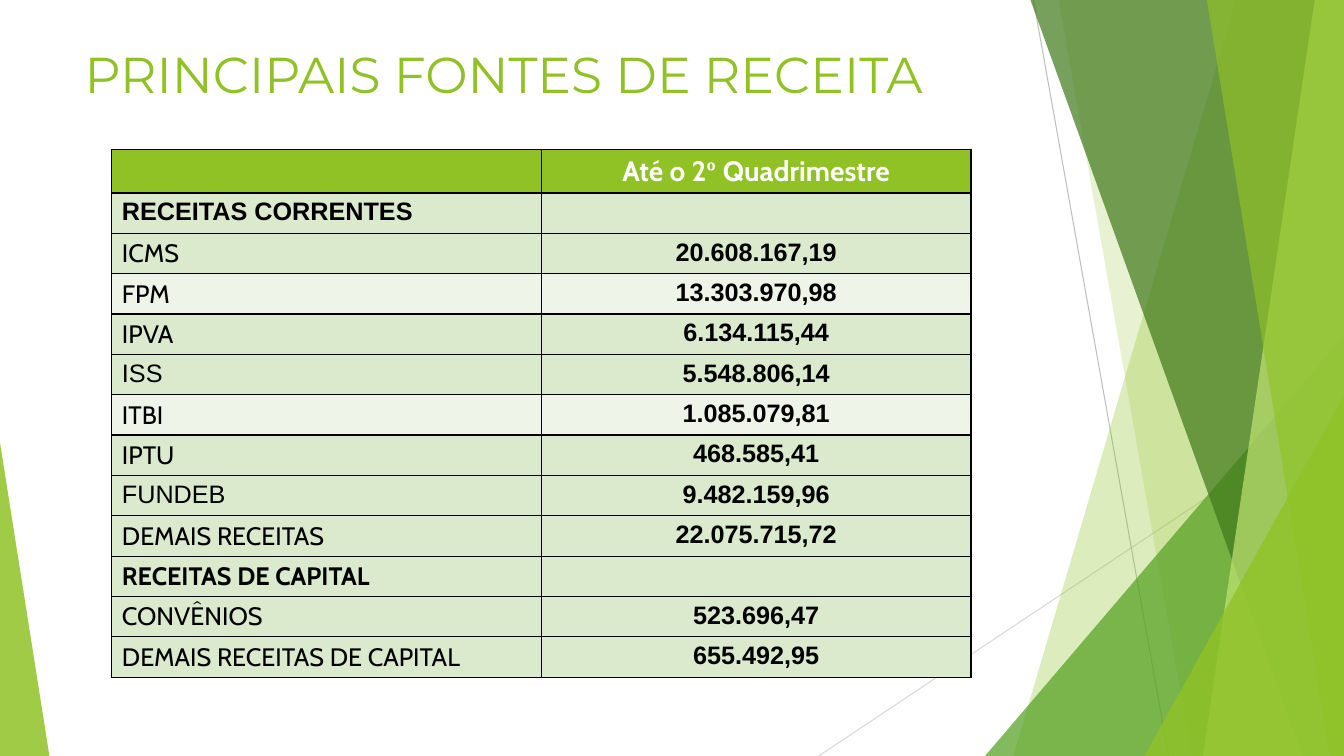
from dataclasses import dataclass

from pptx import Presentation
from pptx.dml.color import RGBColor
from pptx.enum.shapes import MSO_CONNECTOR
from pptx.enum.text import MSO_ANCHOR, PP_ALIGN
from pptx.oxml import parse_xml
from pptx.oxml.ns import nsdecls, qn
from pptx.util import Inches, Pt
from lxml.etree import SubElement


@dataclass(frozen=True)
class Theme:
    lime: str = "90C226"
    green: str = "54A021"
    dark: str = "3F7819"
    pale: str = "C0E474"
    band: str = "DBE9CD"
    light: str = "EEF4E8"
    black: str = "000000"
    white: str = "FFFFFF"
    title: int = 36
    head: int = 20
    body: int = 18
    sans: str = "Arial"
    cabin: str = "Cabin"
    serif: str = "Times New Roman"
    display: str = "Montserrat"


THEME = Theme()

LINES = [
    ((8.12, 7.5), (13.33, 4.03), "D9D9D9"),
    ((10.25, 0), (11.59, 7.5), "BFBFBF"),
]

SHARDS = [
    ([(12.26, 0), (10.05, 7.5), (13.33, 7.5), (13.33, 0)], THEME.lime, 30),
    ([(10.5, 0), (11.82, 7.5), (13.33, 7.5), (13.33, 0)], THEME.lime, 20),
    ([(9.77, 7.5), (13.33, 3.33), (13.33, 7.5)], THEME.green, 72),
    ([(10.22, 0), (12.92, 7.5), (13.33, 7.5), (13.33, 0)], THEME.dark, 70),
    ([(13.04, 0), (11.93, 7.5), (13.33, 7.5), (13.33, 0)], THEME.pale, 70),
    ([(11.97, 0), (13.19, 7.5), (13.33, 7.5), (13.33, 0)], THEME.lime, 65),
    ([(11.35, 7.5), (13.33, 3.93), (13.33, 7.5)], THEME.lime, 80),
    ([(0, 4.39), (0.49, 7.5), (0, 7.5)], THEME.lime, 85),
]

ROWS = [
    ("RECEITAS CORRENTES", ""),
    ("ICMS", "20.608.167,19"),
    ("FPM", "13.303.970,98"),
    ("IPVA", "6.134.115,44"),
    ("ISS", "5.548.806,14"),
    ("ITBI", "1.085.079,81"),
    ("IPTU", "468.585,41"),
    ("FUNDEB", "9.482.159,96"),
    ("DEMAIS RECEITAS", "22.075.715,72"),
    ("RECEITAS DE CAPITAL", ""),
    ("CONVÊNIOS", "523.696,47"),
    ("DEMAIS RECEITAS DE CAPITAL", "655.492,95"),
]
PLAIN = {"RECEITAS CORRENTES", "ISS", "FUNDEB"}
LIGHT = {"FPM", "ITBI"}


def style(font, name, size, color, bold=False):
    font.name = name
    font.size = Pt(size)
    font.bold = bold
    font.color.rgb = RGBColor.from_string(color)


def add_line(slide, start, end, color):
    ends = [Inches(n) for n in start + end]
    line = slide.shapes.add_connector(MSO_CONNECTOR.STRAIGHT, *ends)
    line.line.color.rgb = RGBColor.from_string(color)
    line.line.width = Pt(0.75)
    SubElement(line._element.spPr, qn("a:effectLst"))


def add_shard(slide, points, color, alpha):
    spots = [(Inches(x), Inches(y)) for x, y in points]
    pen = slide.shapes.build_freeform(*spots[0])
    pen.add_line_segments(spots[1:], close=True)
    shard = pen.convert_to_shape()
    shard.shadow.inherit = False
    shard.fill.solid()
    shard.fill.fore_color.rgb = RGBColor.from_string(color)
    shard.line.fill.background()
    tint = shard._element.spPr.find(qn("a:solidFill")).find(qn("a:srgbClr"))
    SubElement(tint, qn("a:alpha")).set("val", str(alpha * 1000))


def add_title(slide, text):
    box = slide.shapes.add_textbox(
        Inches(0.74), Inches(0.33), Inches(9.86), Inches(0.8))
    frame = box.text_frame
    frame.word_wrap = True
    frame.vertical_anchor = MSO_ANCHOR.MIDDLE
    frame.text = text
    style(frame.paragraphs[0].font, THEME.display, THEME.title, THEME.lime)


def paint(cell, color):
    props = cell._tc.get_or_add_tcPr()
    for side in "LRTB":
        props.append(parse_xml(
            f'<a:ln{side} {nsdecls("a")} w="12700"><a:solidFill>'
            f'<a:srgbClr val="{THEME.black}"/></a:solidFill></a:ln{side}>'))
    cell.fill.solid()
    cell.fill.fore_color.rgb = RGBColor.from_string(color)


def fill_cell(cell, text, font, bold, align):
    cell.text = text
    para = cell.text_frame.paragraphs[0]
    para.alignment = align
    style(para.font, font, THEME.body, THEME.black, bold)


def fill_head(cell):
    para = cell.text_frame.paragraphs[0]
    para.alignment = PP_ALIGN.CENTER
    for text, font in [("Até o 2", THEME.cabin), ("º ", THEME.serif),
                       ("Quadrimestre", THEME.cabin)]:
        run = para.add_run()
        run.text = text
        style(run.font, font, THEME.head, THEME.white, True)


def add_grid(slide):
    frame = slide.shapes.add_table(
        len(ROWS) + 1, 2, Inches(1.11), Inches(1.48), Inches(8.52), Inches(4.84))
    table = frame.table
    for row in table.rows:
        row.height = Inches(0.37)
    table.rows[0].height = Inches(0.4)
    for cell in table.rows[0].cells:
        paint(cell, THEME.lime)
    fill_head(table.cell(0, 1))
    for at, (name, value) in enumerate(ROWS, 1):
        label, amount = table.rows[at].cells
        for cell in (label, amount):
            paint(cell, THEME.light if name in LIGHT else THEME.band)
        font = THEME.sans if name in PLAIN else THEME.cabin
        fill_cell(label, name, font, not value, PP_ALIGN.LEFT)
        if value:
            fill_cell(amount, value, THEME.sans, True, PP_ALIGN.CENTER)


def main():
    deck = Presentation()
    deck.slide_width = Inches(13.33)
    deck.slide_height = Inches(7.5)
    slide = deck.slides.add_slide(deck.slide_layouts[6])
    for line in LINES:
        add_line(slide, *line)
    for shard in SHARDS:
        add_shard(slide, *shard)
    add_title(slide, "PRINCIPAIS FONTES DE RECEITA")
    add_grid(slide)
    deck.save("out.pptx")


if __name__ == "__main__":
    main()
